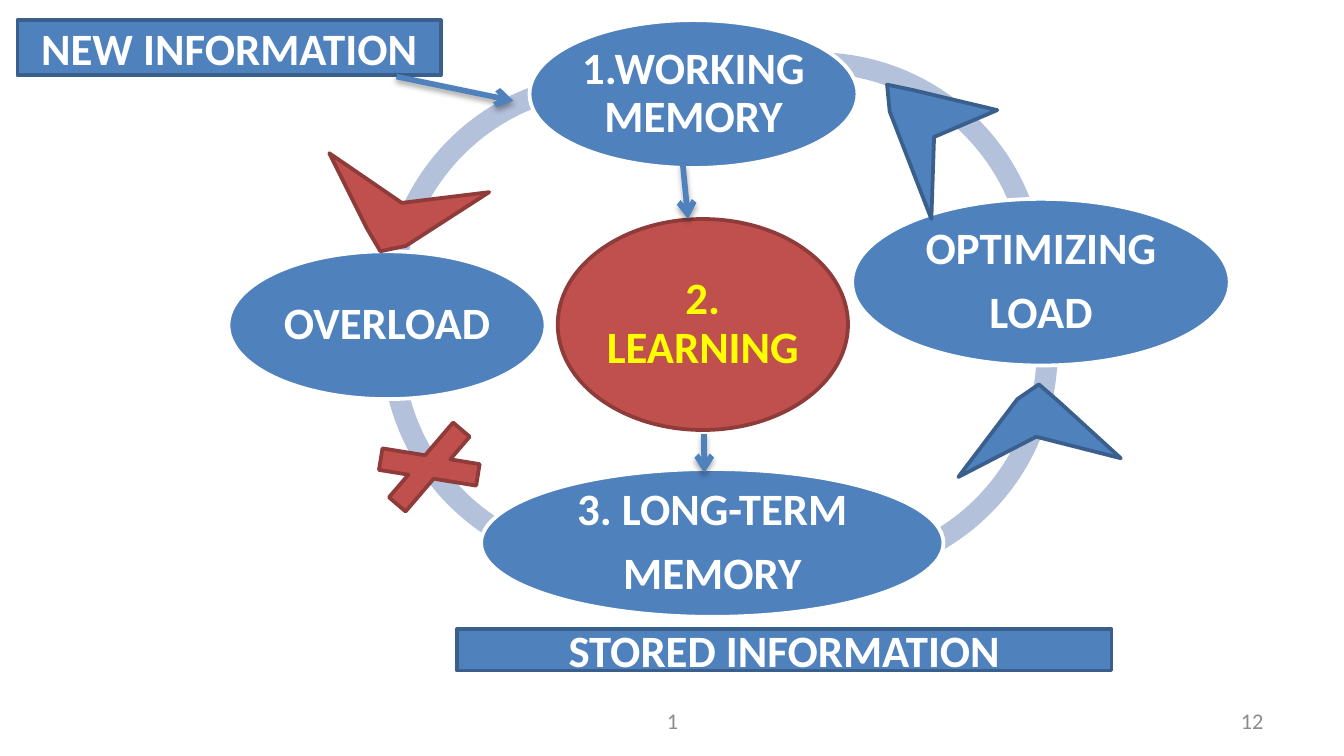
from dataclasses import dataclass

from lxml.etree import SubElement as Sub
from pptx import Presentation as Deck
from pptx.dml.color import RGBColor as Rgb
from pptx.enum.shapes import MSO_CONNECTOR as Link
from pptx.enum.shapes import MSO_SHAPE as Kind
from pptx.enum.text import MSO_ANCHOR as Anchor
from pptx.enum.text import PP_ALIGN as Align
from pptx.oxml.ns import qn
from pptx.util import Pt

PX = 9144
WIDE = 1000 * PX
HIGH = WIDE * 9 // 16
FONT = "Calibri"
HUES = {
    "blue": "4F81BD",
    "navy": "3A5F8C",
    "red": "C0504D",
    "wine": "8E3B39",
    "pale": "B3C1DB",
    "white": "FFFFFF",
    "yellow": "FFFF00",
    "grey": "8C8C8C",
}


@dataclass
class Box:
    left: int
    top: int
    width: int
    height: int

    def emu(self) -> tuple[int, ...]:
        return tuple(n * PX for n in (self.left, self.top, self.width, self.height))


@dataclass
class Arc:
    left: int
    top: int
    start: int
    end: int


@dataclass
class Node:
    box: Box
    text: str
    fill: str = "blue"
    edge: str = "white"
    ink: str = "white"


@dataclass
class Arrow:
    start: tuple[int, int]
    end: tuple[int, int]


@dataclass
class Head:
    points: list[tuple[int, int]]
    fill: str
    edge: str


@dataclass
class Note:
    box: Box
    text: str
    align: Align


ARC_SIZE = 341
ARC_BAND = 4.6 / 100
ARCS = [
    Arc(284, 54, 174, 292),
    Arc(284, 85, 63, 185),
    Arc(446, 91, 342, 121),
    Arc(437, 39, 237, 0),
]
NODES = [
    Node(Box(415, 163, 216, 157), "2. LEARNING", "red", "wine", "yellow"),
    Node(Box(394, 15, 244, 110), "1.WORKING MEMORY"),
    Node(Box(634, 148, 281, 124), "OPTIMIZING\nLOAD"),
    Node(Box(358, 349, 344, 110), "3. LONG-TERM\nMEMORY"),
    Node(Box(170, 187, 236, 110), "OVERLOAD"),
]
LABELS = [
    Node(Box(13, 15, 315, 41), "NEW INFORMATION", edge="navy"),
    Node(Box(340, 468, 487, 31), "STORED INFORMATION", edge="navy"),
]
ARROWS = [
    Arrow((295, 57), (382, 75)),
    Arrow((508, 122), (512, 163)),
    Arrow((524, 323), (524, 352)),
]
CROSS = Box(258, 313, 123, 69)
HEADS = [
    Head([(364, 143), (302, 183), (283, 187), (273, 170), (245, 114), (299, 151)], "red", "wine"),
    Head([(693, 163), (662, 83), (660, 63), (679, 67), (742, 82), (695, 102)], "blue", "navy"),
    Head([(713, 355), (757, 297), (773, 286), (788, 299), (834, 341), (771, 325)], "blue", "navy"),
]
NOTES = [
    Note(Box(717, 521, 233, 30), "12", Align.RIGHT),
    Note(Box(342, 521, 317, 30), "1", Align.CENTER),
]


def hue(name: str) -> Rgb:
    return Rgb.from_string(HUES[name])


def paint(shape, fill: str, edge: str | None = None) -> None:
    shape.shadow.inherit = False
    shape.fill.solid()
    shape.fill.fore_color.rgb = hue(fill)
    if edge:
        shape.line.color.rgb = hue(edge)
        shape.line.width = Pt(2)
    else:
        shape.line.fill.background()


def write(shape, text: str, size: int, ink: str, bold: bool, align: Align) -> None:
    frame = shape.text_frame
    frame.word_wrap = True
    frame.vertical_anchor = Anchor.MIDDLE
    frame.text = text
    for para in frame.paragraphs:
        para.alignment = align
        for run in para.runs:
            font = run.font
            font.name, font.size, font.bold = FONT, Pt(size), bold
            font.color.rgb = hue(ink)


def add_arc(slide, arc: Arc) -> None:
    box = Box(arc.left, arc.top, ARC_SIZE, ARC_SIZE)
    shape = slide.shapes.add_shape(Kind.BLOCK_ARC, *box.emu())
    shape.adjustments[0] = arc.start * 0.6
    shape.adjustments[1] = arc.end * 0.6
    shape.adjustments[2] = ARC_BAND
    paint(shape, "pale")


def add_node(slide, node: Node, kind: Kind):
    shape = slide.shapes.add_shape(kind, *node.box.emu())
    paint(shape, node.fill, node.edge)
    write(shape, node.text, 24, node.ink, True, Align.CENTER)
    return shape


def add_oval(slide, node: Node) -> None:
    frame = add_node(slide, node, Kind.OVAL).text_frame
    frame.margin_left = frame.margin_right = 3 * PX
    frame.margin_top = frame.margin_bottom = 3 * PX
    for para in frame.paragraphs:
        para.line_spacing = 0.9
        para.space_after = Pt(8.4)


def add_arrow(slide, arrow: Arrow) -> None:
    ends = [n * PX for n in (*arrow.start, *arrow.end)]
    link = slide.shapes.add_connector(Link.STRAIGHT, *ends)
    link.line.color.rgb = hue("blue")
    link.line.width = Pt(3)
    props = link.element.spPr
    Sub(props.find(qn("a:ln")), qn("a:tailEnd"), type="arrow")
    glow = Sub(props, qn("a:effectLst"))
    shade = Sub(glow, qn("a:outerShdw"), blurRad=str(Pt(3.1)), dist=str(Pt(1.8)),
                dir="5400000", rotWithShape="0")
    black = Sub(shade, qn("a:srgbClr"), val="000000")
    Sub(black, qn("a:alpha"), val="35000")


def add_head(slide, head: Head) -> None:
    first, *rest = head.points
    pen = slide.shapes.build_freeform(*first, scale=PX)
    pen.add_line_segments(rest, close=True)
    paint(pen.convert_to_shape(), head.fill, head.edge)


def add_note(slide, note: Note) -> None:
    shape = slide.shapes.add_textbox(*note.box.emu())
    write(shape, note.text, 12, "grey", False, note.align)


def main() -> None:
    deck = Deck()
    deck.slide_width, deck.slide_height = WIDE, HIGH
    slide = deck.slides.add_slide(deck.slide_layouts[6])
    for arc in ARCS:
        add_arc(slide, arc)
    for node in NODES:
        add_oval(slide, node)
    for label in LABELS:
        add_node(slide, label, Kind.RECTANGLE)
    for arrow in ARROWS:
        add_arrow(slide, arrow)
    cross = slide.shapes.add_shape(Kind.MATH_MULTIPLY, *CROSS.emu())
    cross.rotation = 339.9
    paint(cross, "red", "wine")
    for head in HEADS:
        add_head(slide, head)
    for note in NOTES:
        add_note(slide, note)
    deck.save("out.pptx")


if __name__ == "__main__":
    main()
